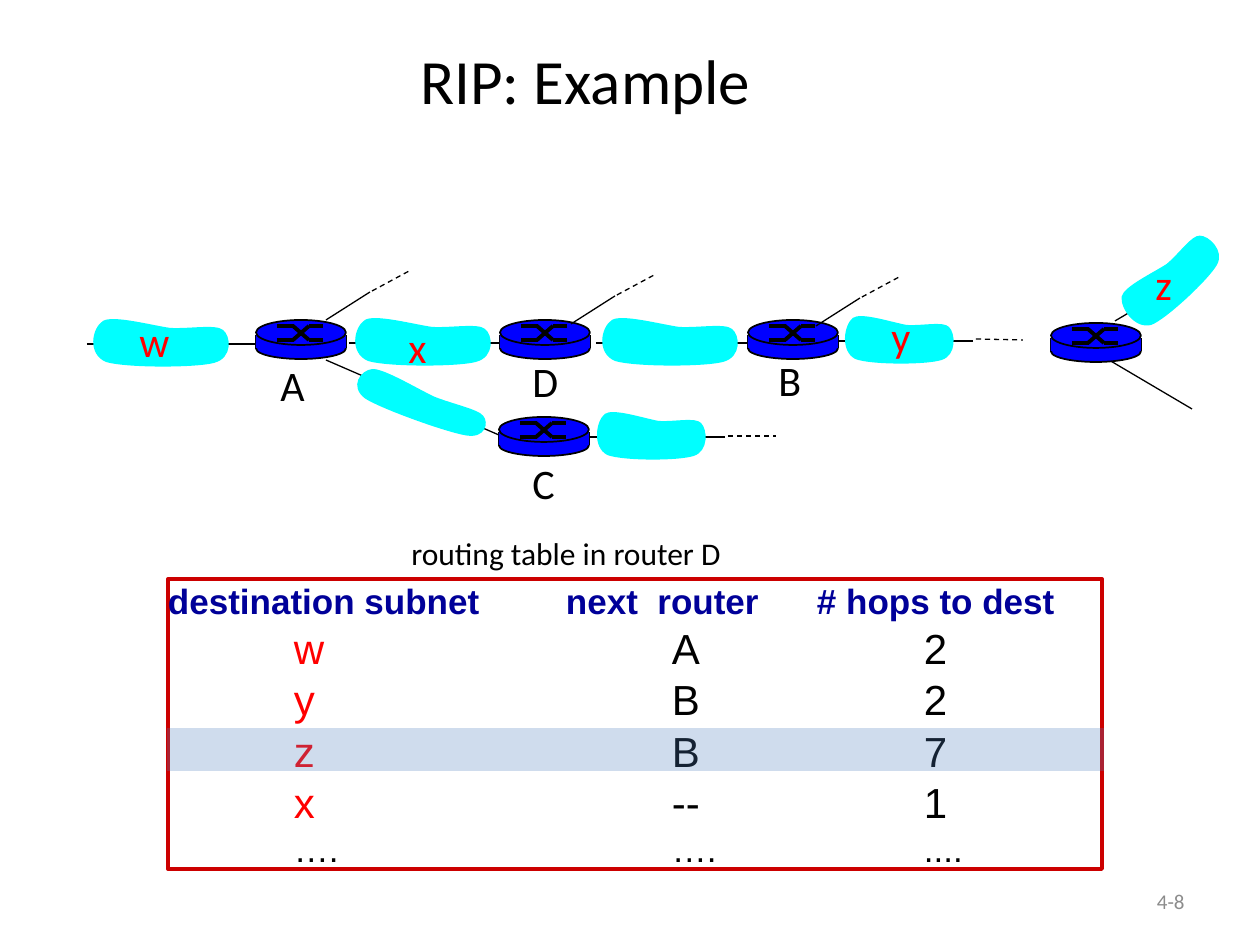
from lxml import etree
from pptx import Presentation
from pptx import util as u
from pptx.dml.color import RGBColor
from pptx.enum import dml, shapes, text
from pptx.oxml.ns import qn

EMU_PER_PX = u.Inches(1) / 126
COLORS = {
    "black": "000000", "red": "FF0000", "frame": "CC0000", "heading": "000099",
    "router": "0000FF", "subnet": "00FFFF", "highlight": "4F81BD", "number": "8C8C8C",
}

# Subnet outline: a start point, then three points for each curve, on a 146 x 53 grid
CLOUD_GRID = (146, 53)
CLOUD = [
    (83, 13),
    (63, 10), (26, 0), (16, 6),
    (5, 13), (0, 39), (19, 47),
    (38, 53), (108, 53), (127, 48),
    (146, 43), (144, 21), (136, 15),
    (129, 9), (103, 14), (83, 13),
]


def px(value):
    return u.Emu(round(value * EMU_PER_PX))


def color(name):
    return RGBColor.from_string(COLORS[name])


def add_line(parent, x1, y1, x2, y2, weight=0.75, dashed=False):
    line = parent.shapes.add_connector(
        shapes.MSO_CONNECTOR.STRAIGHT, px(x1), px(y1), px(x2), px(y2))
    line.line.color.rgb = color("black")
    line.line.width = u.Pt(weight)
    if dashed:
        line.line.dash_style = dml.MSO_LINE.DASH
    etree.SubElement(line._element.spPr, qn("a:effectLst"))


def paint(shape, fill=None, line=None, weight=1):
    shape.shadow.inherit = False
    if fill:
        shape.fill.solid()
        shape.fill.fore_color.rgb = color(fill)
    else:
        shape.fill.background()
    if line:
        shape.line.color.rgb = color(line)
        shape.line.width = u.Pt(weight)
    else:
        shape.line.fill.background()


def add_preset(parent, kind, left, top, width, height, **style):
    shape = parent.shapes.add_shape(kind, px(left), px(top), px(width), px(height))
    paint(shape, **style)
    return shape


def add_span(para, words, size, name="black", font="Calibri", bold=False):
    span = para.add_run()
    span.text = words
    span.font.size = u.Pt(size)
    span.font.name = font
    span.font.bold = bold
    span.font.color.rgb = color(name)


def add_text(page, words, left, top, width, height, size=24, name="black",
             align=text.PP_ALIGN.LEFT, anchor=text.MSO_ANCHOR.TOP, wrap=False):
    box = page.shapes.add_textbox(px(left), px(top), px(width), px(height))
    frame = box.text_frame
    frame.word_wrap = wrap
    frame.vertical_anchor = anchor
    frame.paragraphs[0].alignment = align
    add_span(frame.paragraphs[0], words, size, name)


def add_router(page, left, top):
    group = page.shapes.add_group_shape()
    oval, rect = shapes.MSO_SHAPE.OVAL, shapes.MSO_SHAPE.RECTANGLE
    add_preset(group, oval, left, top + 18, 90, 21, fill="router", line="black")
    for x in (left, left + 90):
        add_line(group, x, top + 15, x, top + 28, 1)
    add_preset(group, rect, left, top + 15, 90, 13, fill="router")
    add_preset(group, oval, left, top, 90, 25, fill="router", line="black")
    # Crossing arms on the lid
    for start, end in ((6, 20), (20, 6)):
        add_line(group, left + 21, top + start, left + 38, top + start, 2.25)
        add_line(group, left + 53, top + end, left + 67, top + end, 2.25)
        add_line(group, left + 37, top + start, left + 53, top + end, 2.25)


def add_subnet(page, left, top, width=146, height=53, rotation=0):
    points = [(px(left + x * width / CLOUD_GRID[0]), px(top + y * height / CLOUD_GRID[1]))
              for x, y in CLOUD]
    builder = page.shapes.build_freeform(*points[0])
    builder.add_line_segments(points[1:], close=True)
    cloud = builder.convert_to_shape()
    paint(cloud, fill="subnet")
    # Join each three straight segments into one curve
    segments = list(cloud._element.iter(qn("a:lnTo")))
    for first, *others in zip(segments[::3], segments[1::3], segments[2::3]):
        first.tag = qn("a:cubicBezTo")
        for other in others:
            first.append(other[0])
            other.getparent().remove(other)
    cloud.rotation = rotation


def add_stub(page, x, y):
    add_line(page, x, y, x + 44, y - 28)
    add_line(page, x + 46, y - 29, x + 85, y - 50, dashed=True)


def set_layout(para, line_height, stops):
    para.alignment = text.PP_ALIGN.LEFT
    para.line_spacing = u.Pt(line_height)
    tabs = etree.SubElement(para._p.get_or_add_pPr(), qn("a:tabLst"))
    for stop in stops:
        etree.SubElement(tabs, qn("a:tab"), pos=str(px(stop)), algn="l")


def add_routing_table(page):
    box = add_preset(page, shapes.MSO_SHAPE.RECTANGLE, 168, 579, 934, 290,
                     line="frame", weight=2.25)
    frame = box.text_frame
    frame.margin_left = frame.margin_right = frame.margin_top = frame.margin_bottom = 0
    frame.vertical_anchor = text.MSO_ANCHOR.TOP
    head = frame.paragraphs[0]
    set_layout(head, 24.4, (398, 649))
    add_span(head, "destination subnet\tnext  router\t# hops to dest", 20, "heading",
             "Arial", True)
    rows = [("w", "A", "2"), ("y", "B", "2"), ("z", "B", "7"), ("x", "--", "1"),
            ("….", "….", "....")]
    for subnet, router, hops in rows:
        more = subnet == "…."
        size = 20 if more else 24
        para = frame.add_paragraph()
        set_layout(para, 24.4 if more else 29.3, (126, 504, 756))
        add_span(para, "\t", size, font="Arial")
        add_span(para, subnet, size, "black" if more else "red", "Arial")
        add_span(para, f"\t{router}\t{hops}", size, font="Arial")


def add_highlight(page):
    band = add_preset(page, shapes.MSO_SHAPE.RECTANGLE, 167, 728, 937, 43, fill="highlight")
    tint = band._element.spPr.find(qn("a:solidFill"))[0]
    etree.SubElement(tint, qn("a:alpha"), val="27000")


def main():
    deck = Presentation()
    deck.slide_width, deck.slide_height = px(1260), px(945)
    page = deck.slides.add_slide(deck.slide_layouts[6])

    # Title and slide number
    middle = text.MSO_ANCHOR.MIDDLE
    add_text(page, "RIP: Example", 50, 0, 1071, 158, 36, align=text.PP_ALIGN.CENTER,
             anchor=middle, wrap=True)
    add_text(page, "4-8", 903, 876, 294, 50, 12, "number", text.PP_ALIGN.RIGHT, middle, True)

    # Links
    for x, y in ((87, 344), (349, 343), (596, 343)):
        add_line(page, x, y, x + 171, y, 1)
    for ends in ((838, 341, 973, 341), (590, 437, 725, 437), (326, 360, 499, 435),
                 (1115, 321, 1198, 272), (1109, 360, 1192, 409)):
        add_line(page, *ends)
    for ends in ((976, 339, 1023, 340), (728, 436, 776, 436)):
        add_line(page, *ends, dashed=True)

    # Routers A, D, B, C and the far one
    for place in ((256, 320), (500, 320), (748, 320), (499, 417), (1051, 323)):
        add_router(page, *place)
    for start in ((326, 320), (571, 324), (816, 326)):
        add_stub(page, *start)

    # Subnets
    for place in ((87, 315), (349, 314), (596, 314), (840, 312, 117), (592, 408, 117),
                  (348, 383, 146, 39, 19.7), (1110, 253, 120, 53, 316.8)):
        add_subnet(page, *place)

    # Names of subnets and routers
    for name, left, top, width in (("w", 127, 309, 54), ("x", 396, 315, 50),
                                   ("y", 879, 304, 48), ("z", 1143, 252, 48)):
        add_text(page, name, left, top, width, 63, name="red")
    for name, left, top, width in (("A", 268, 353, 55), ("C", 520, 451, 50),
                                   ("D", 520, 349, 55), ("B", 766, 348, 52)):
        add_text(page, name, left, top, width, 63)

    # Routing table
    add_text(page, "routing table in router D", 399, 528, 387, 50, 18)
    add_routing_table(page)
    add_highlight(page)

    deck.save("out.pptx")


if __name__ == "__main__":
    main()
